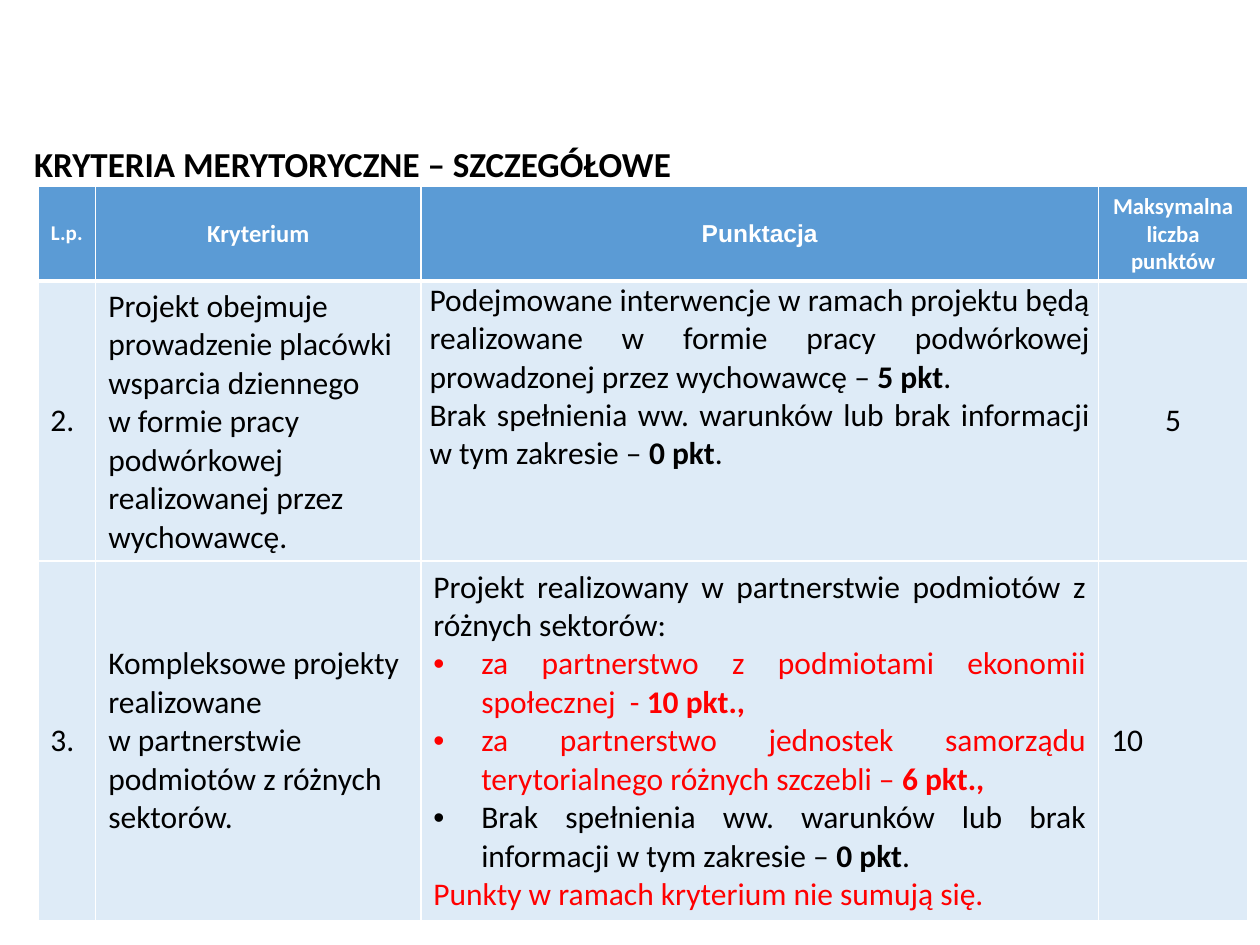
from dataclasses import dataclass

from lxml import etree
from pptx import Presentation
from pptx.dml.color import RGBColor
from pptx.enum.text import MSO_ANCHOR, MSO_AUTO_SIZE, PP_ALIGN
from pptx.oxml.ns import qn
from pptx.util import Inches, Pt

LEFT, CENTER, JUSTIFY = PP_ALIGN.LEFT, PP_ALIGN.CENTER, PP_ALIGN.JUSTIFY
TOP, MIDDLE = MSO_ANCHOR.TOP, MSO_ANCHOR.MIDDLE

WHITE = RGBColor(0xFF, 0xFF, 0xFF)
BLACK = RGBColor(0x00, 0x00, 0x00)
RED = RGBColor(0xFF, 0x00, 0x00)
HEADER_BLUE = RGBColor(0x5B, 0x9B, 0xD5)
BODY_BLUE = RGBColor(0xDE, 0xEB, 0xF7)

COLUMN_WIDTHS = (0.46, 2.58, 5.38, 1.18)
ROW_HEIGHTS = (0.55, 2.22, 2.86)
BULLET_INDENT = Inches(0.38)
THIN, THICK = Pt(1), Pt(3)


@dataclass
class Span:
    text: str
    bold: bool = False
    color: RGBColor = BLACK
    size: float = 18
    font: str = "Calibri"


@dataclass
class Para:
    spans: list[Span]
    align: PP_ALIGN = LEFT
    bullet: bool = False


@dataclass
class Entry:
    paras: list[Para]
    anchor: MSO_ANCHOR = MIDDLE
    tight: bool = False
    fill: RGBColor = BODY_BLUE


def heading(text: str, size: float, font: str = "Calibri") -> Entry:
    return Entry([Para([Span(text, True, WHITE, size, font)], CENTER)], fill=HEADER_BLUE)


def plain(text: str) -> Entry:
    return Entry([Para([Span(text)])])


def scored(text: str, points: str, end: str = "", color: RGBColor = BLACK,
           bullet: bool = False) -> Para:
    """Justified sentence with the number of points in bold."""
    spans = [Span(text, color=color), Span(points, True, color)]
    if end:
        spans.append(Span(end, color=color))
    return Para(spans, JUSTIFY, bullet)


CRITERIA = [
    [heading("L.p.", 12), heading("Kryterium", 14), heading("Punktacja", 14, "Arial"),
     heading("Maksymalna liczba punktów", 13)],
    [plain("2."),
     plain("Projekt obejmuje prowadzenie placówki wsparcia dziennego \n"
           "w formie pracy podwórkowej realizowanej przez wychowawcę."),
     Entry([
         scored("Podejmowane interwencje w ramach projektu będą realizowane w formie "
                "pracy podwórkowej prowadzonej przez wychowawcę – ", "5 pkt", "."),
         scored("Brak spełnienia ww. warunków lub brak informacji w tym zakresie – ",
                "0 pkt", "."),
     ], TOP, tight=True),
     Entry([Para([Span("5")], CENTER)], tight=True)],
    [plain("3."),
     plain("Kompleksowe projekty realizowane \n"
           "w partnerstwie podmiotów z różnych sektorów."),
     Entry([
         Para([Span("Projekt realizowany w partnerstwie podmiotów z różnych sektorów:")],
              JUSTIFY),
         scored("za partnerstwo z podmiotami ekonomii społecznej  - ", "10 pkt.,",
                color=RED, bullet=True),
         scored("za partnerstwo jednostek samorządu terytorialnego różnych szczebli – ",
                "6 pkt.,", color=RED, bullet=True),
         scored("Brak spełnienia ww. warunków lub brak informacji w tym zakresie – ",
                "0 pkt", ".", bullet=True),
         Para([Span("Punkty w ramach kryterium nie sumują się.", color=RED)], JUSTIFY),
     ]),
     plain("10")],
]


def add_span(paragraph, span: Span) -> None:
    for number, line in enumerate(span.text.split("\n")):
        if number:
            paragraph.add_line_break()
        run = paragraph.add_run()
        run.text = line
        run.font.name = span.font
        run.font.size = Pt(span.size)
        run.font.bold = span.bold
        run.font.color.rgb = span.color


def add_bullet(paragraph) -> None:
    properties = paragraph._p.get_or_add_pPr()
    properties.set("marL", str(BULLET_INDENT))
    properties.set("indent", str(-BULLET_INDENT))
    etree.SubElement(properties, qn("a:buFont"), typeface="Arial")
    etree.SubElement(properties, qn("a:buChar"), char="•")


def set_borders(cell, top: int, bottom: int) -> None:
    properties = cell._tc.get_or_add_tcPr()
    for side, width in (("L", THIN), ("R", THIN), ("T", top), ("B", bottom)):
        line = etree.SubElement(properties, qn(f"a:ln{side}"), w=str(width))
        solid = etree.SubElement(line, qn("a:solidFill"))
        etree.SubElement(solid, qn("a:srgbClr"), val=str(WHITE))


def fill_cell(cell, entry: Entry) -> None:
    cell.fill.solid()
    cell.fill.fore_color.rgb = entry.fill
    cell.vertical_anchor = entry.anchor
    if entry.tight:
        cell.margin_left = cell.margin_right = Inches(0.07)
        cell.margin_top = cell.margin_bottom = 0
    frame = cell.text_frame
    for number, para in enumerate(entry.paras):
        paragraph = frame.add_paragraph() if number else frame.paragraphs[0]
        paragraph.alignment = para.align
        if para.bullet:
            add_bullet(paragraph)
        for span in para.spans:
            add_span(paragraph, span)


def add_criteria_table(slide) -> None:
    table = slide.shapes.add_table(
        len(ROW_HEIGHTS), len(COLUMN_WIDTHS), Inches(0.3), Inches(1.48),
        Inches(sum(COLUMN_WIDTHS)), Inches(sum(ROW_HEIGHTS))).table
    table.horz_banding = False
    for column, width in zip(table.columns, COLUMN_WIDTHS):
        column.width = Inches(width)
    for row, height in zip(table.rows, ROW_HEIGHTS):
        row.height = Inches(height)
    for r, entries in enumerate(CRITERIA):
        for c, entry in enumerate(entries):
            cell = table.cell(r, c)
            # A thick line parts the header from the criteria
            set_borders(cell, THICK if r == 1 else THIN, THICK if r == 0 else THIN)
            fill_cell(cell, entry)


def add_title(slide) -> None:
    title = slide.shapes.title
    title.left, title.top = Inches(0.17), Inches(1.08)
    title.width, title.height = Inches(5.42), Inches(0.44)
    frame = title.text_frame
    frame.word_wrap = False
    frame.auto_size = MSO_AUTO_SIZE.SHAPE_TO_FIT_TEXT
    frame.vertical_anchor = MIDDLE
    frame.paragraphs[0].alignment = LEFT
    add_span(frame.paragraphs[0],
             Span("KRYTERIA MERYTORYCZNE – SZCZEGÓŁOWE", True, size=20))


def main() -> None:
    presentation = Presentation()
    presentation.slide_width, presentation.slide_height = Inches(10), Inches(7.5)
    slide = presentation.slides.add_slide(presentation.slide_layouts[5])
    add_title(slide)
    add_criteria_table(slide)
    presentation.save("out.pptx")


if __name__ == "__main__":
    main()
